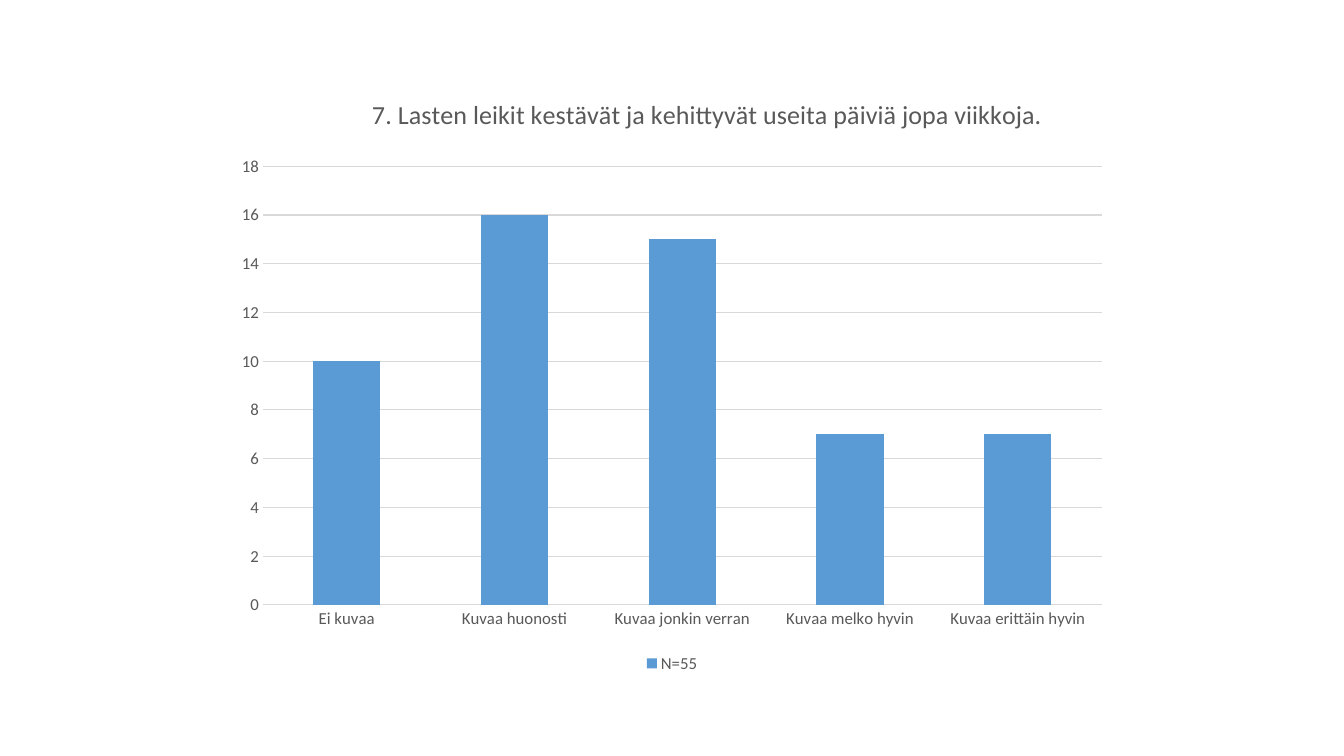
from dataclasses import dataclass

from lxml import etree
from pptx import Presentation
from pptx.chart.data import CategoryChartData
from pptx.dml.color import RGBColor
from pptx.enum.chart import XL_CHART_TYPE, XL_LEGEND_POSITION, XL_TICK_MARK
from pptx.oxml.ns import qn
from pptx.util import Inches, Pt


@dataclass(frozen=True)
class Theme:
    """Colours, font and type sizes of the slide."""
    font: str = "Calibri"
    text: RGBColor = RGBColor(0x59, 0x59, 0x59)
    grid: RGBColor = RGBColor(0xD9, 0xD9, 0xD9)
    bar: RGBColor = RGBColor(0x5B, 0x9B, 0xD5)
    title_size: float = 18.6
    label_size: float = 12


THEME = Theme()
TITLE = "7. Lasten leikit kestävät ja kehittyvät useita päiviä jopa viikkoja."
ANSWERS = {
    "Ei kuvaa": 10,
    "Kuvaa huonosti": 16,
    "Kuvaa jonkin verran": 15,
    "Kuvaa melko hyvin": 7,
    "Kuvaa erittäin hyvin": 7,
}


def style_font(font, size):
    """Apply the theme's text style at the given size."""
    font.name = THEME.font
    font.size = Pt(size)
    font.bold = False
    font.color.rgb = THEME.text


def style_line(line):
    """Apply the thin grid line style."""
    line.color.rgb = THEME.grid
    line.width = Pt(0.75)


def place(element, **settings):
    """Give a chart part a manual layout in fractions of the chart."""
    layout = element.find(qn("c:layout"))
    if layout is None:
        layout = etree.Element(qn("c:layout"))
        tx = element.find(qn("c:tx"))
        if tx is None:
            element.insert(0, layout)
        else:
            tx.addnext(layout)
    manual = etree.SubElement(layout, qn("c:manualLayout"))
    for name, value in settings.items():
        etree.SubElement(manual, qn(f"c:{name}")).set("val", str(value))


def add_answer_chart(slide, left, top, width, height):
    """Place the column chart of answers in the given box."""
    data = CategoryChartData()
    data.categories = list(ANSWERS)
    data.add_series("N=55", list(ANSWERS.values()))
    chart = slide.shapes.add_chart(
        XL_CHART_TYPE.COLUMN_STACKED, left, top, width, height, data).chart
    style_font(chart.font, THEME.label_size)

    tf = chart.chart_title.text_frame
    tf.text = TITLE
    style_font(tf.paragraphs[0].font, THEME.title_size)
    chart.chart_title.include_in_layout = False
    place(tf._txBody.getparent().getparent(),
          xMode="edge", yMode="edge", x=0.16, y=0.02)
    place(chart.plots[0]._element.getparent(), layoutTarget="inner",
          xMode="edge", yMode="edge", x=0.0435, y=0.145, w=0.936, h=0.734)

    plot = chart.plots[0]
    plot.gap_width = 150
    plot.overlap = 100
    plot.vary_by_categories = False
    fill = plot.series[0].format.fill
    fill.solid()
    fill.fore_color.rgb = THEME.bar

    for axis in (chart.category_axis, chart.value_axis):
        axis.major_tick_mark = axis.minor_tick_mark = XL_TICK_MARK.NONE
        style_font(axis.tick_labels.font, THEME.label_size)
    style_line(chart.category_axis.format.line)
    values = chart.value_axis
    values.format.line.fill.background()
    values.minimum_scale, values.maximum_scale, values.major_unit = 0, 18, 2
    style_line(values.major_gridlines.format.line)

    chart.has_legend = True
    chart.legend.position = XL_LEGEND_POSITION.BOTTOM
    chart.legend.include_in_layout = False
    style_font(chart.legend.font, THEME.label_size)


def main():
    """Build the slide and save it."""
    prs = Presentation()
    prs.slide_width, prs.slide_height = Inches(13.33), Inches(7.5)
    slide = prs.slides.add_slide(prs.slide_layouts[6])
    add_answer_chart(slide, Inches(2.22), Inches(0.79), Inches(8.89), Inches(5.93))
    prs.save("out.pptx")


if __name__ == "__main__":
    main()
